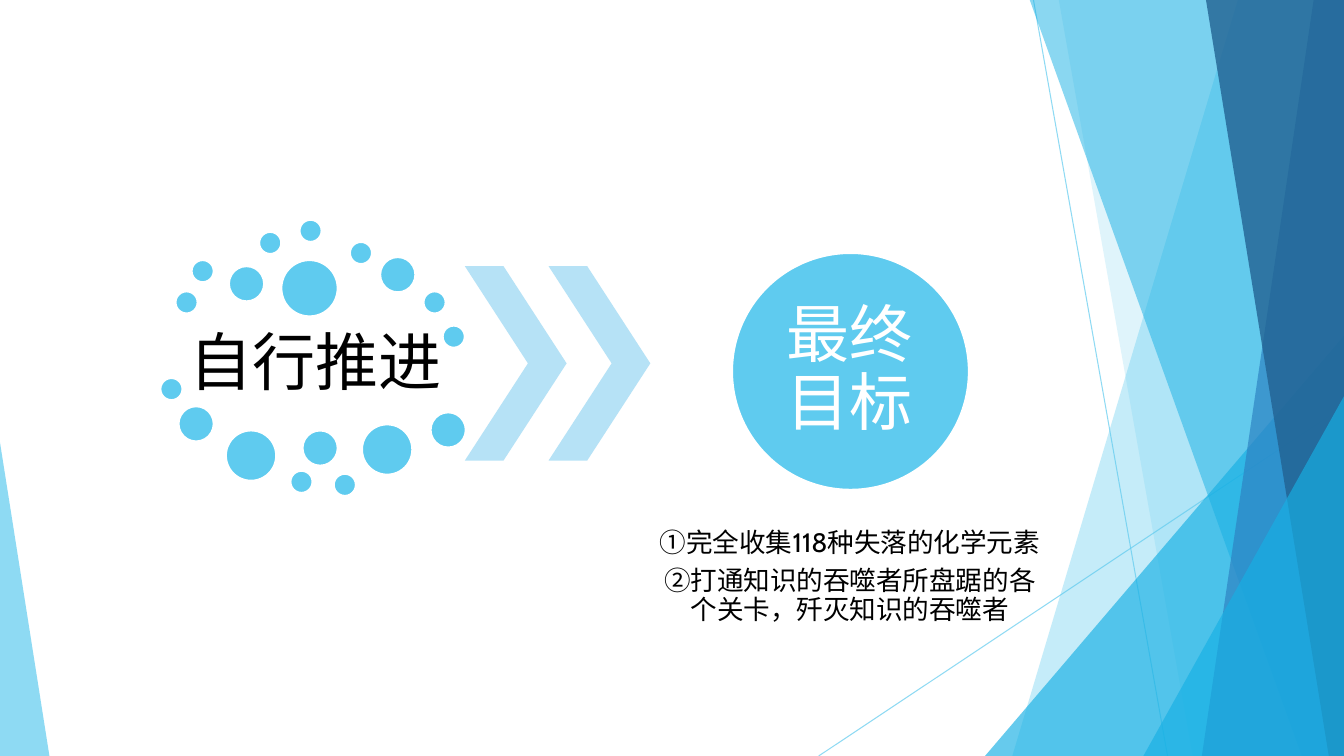
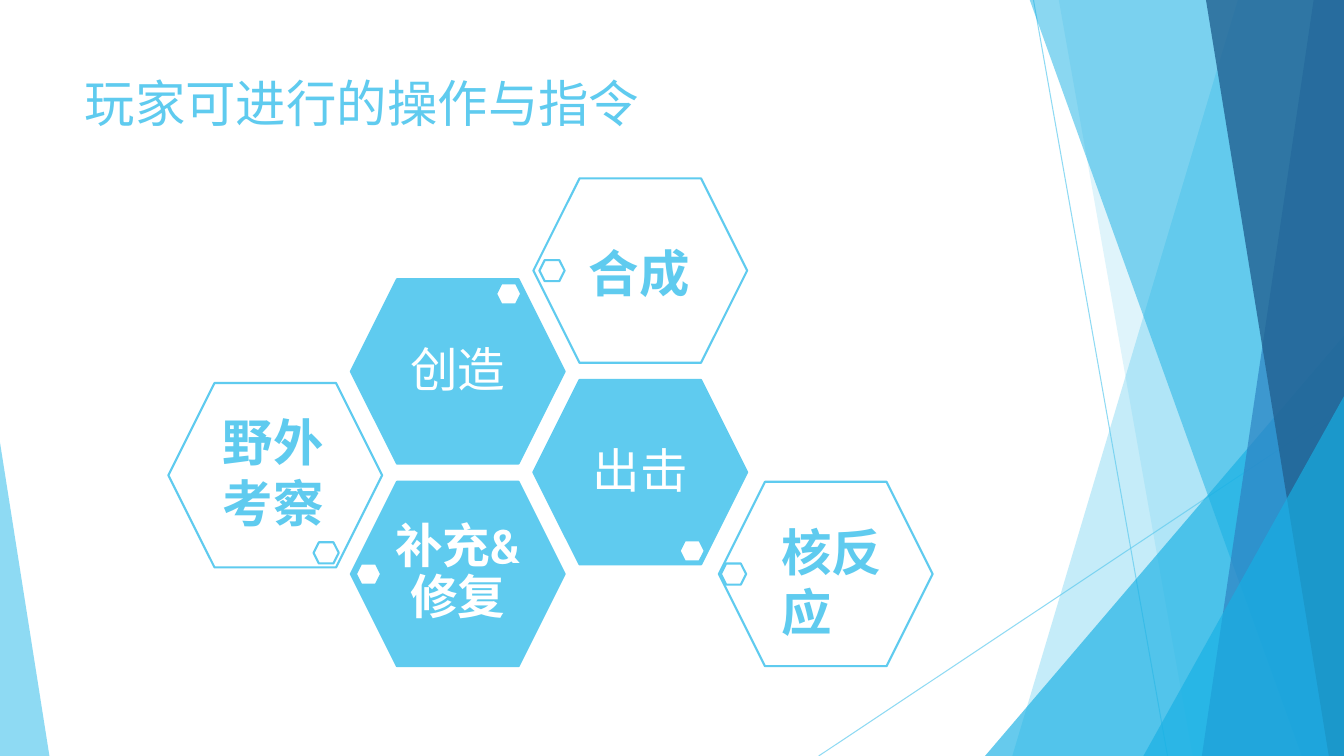
from pptx import Presentation
from pptx.dml.color import RGBColor
from pptx.enum.shapes import MSO_CONNECTOR, MSO_SHAPE
from pptx.enum.text import MSO_ANCHOR, MSO_AUTO_SIZE, PP_ALIGN
from pptx.oxml.ns import qn
from pptx.util import Inches, Pt
from lxml.etree import SubElement

SKY, CYAN, BLUE, NAVY = "5FCBEF", "17B0E4", "2E83C3", "226292"
PALE, WHITE, BLACK = "B6E2F6", "FFFFFF", "000000"
FONT = "Cabin"
WIDE, HIGH = 13.33, 7.5


def paint(shape, fill=None, line=None, width=1.5, alpha=100):
    """Set fill and outline from hex strings; alpha is a percentage."""
    if fill:
        shape.shadow.inherit = False
        shape.fill.solid()
        shape.fill.fore_color.rgb = RGBColor.from_string(fill)
    if line:
        shape.line.color.rgb = RGBColor.from_string(line)
        shape.line.width = Pt(width)
    else:
        shape.line.fill.background()
    if alpha < 100:
        color = shape.element.xpath(".//p:spPr//a:srgbClr")[0]
        SubElement(color, qn("a:alpha")).set("val", str(alpha * 1000))


def write(shape, text, size, color, bold=False, inset=None, tight=True):
    """Fill a text shape; tight text is centred with narrow line spacing."""
    frame = shape.text_frame
    frame.word_wrap = True
    frame.auto_size = MSO_AUTO_SIZE.NONE
    frame.vertical_anchor = MSO_ANCHOR.MIDDLE if tight else MSO_ANCHOR.TOP
    if inset is not None:
        frame.margin_left = frame.margin_right = Inches(inset)
        frame.margin_top = frame.margin_bottom = Inches(inset)
    frame.text = text
    for para in frame.paragraphs:
        para.alignment = PP_ALIGN.CENTER if tight else PP_ALIGN.LEFT
        if tight:
            para.line_spacing = 0.9
            para.space_after = Pt(size * 0.35)
        for run in para.runs:
            run.font.name = FONT
            run.font.size = Pt(size)
            run.font.bold = bold
            run.font.color.rgb = RGBColor.from_string(color)


deck = Presentation()
deck.slide_width, deck.slide_height = Inches(WIDE), Inches(HIGH)

# Shared backdrop, drawn once and moved to the slide master
goal = deck.slides.add_slide(deck.slide_layouts[6])
shapes = goal.shapes

for x1, y1, x2, y2 in [(10.25, 0, 11.58, HIGH), (WIDE, 4.03, 8.12, HIGH)]:
    rule = shapes.add_connector(MSO_CONNECTOR.STRAIGHT, Inches(x1), Inches(y1),
                                Inches(x2), Inches(y2))
    paint(rule, line=SKY, width=0.75, alpha=70)
    SubElement(rule.element.spPr, qn("a:effectLst"))

# Bands give top and foot of the left edge; peaks give left, top, width, tip
backdrop = [
    ("band", (12.28, 10.04), SKY, 36),
    ("band", (10.5, 11.83), SKY, 20),
    ("peak", (9.77, 3.33, 3.56, 1), CYAN, 66),
    ("band", (10.21, 12.91), CYAN, 50),
    ("band", (13.03, 11.92), BLUE, 70),
    ("band", (11.96, 13.18), NAVY, 80),
    ("peak", (11.34, 3.93, 1.99, 1), CYAN, 66),
    ("peak", (0, 4.39, 0.49, 0), SKY, 70),
]
for kind, place, color, alpha in backdrop:
    if kind == "band":
        top, foot = place
        pen = shapes.build_freeform(Inches(top), Inches(-0.01))
        pen.add_line_segments([(Inches(x), Inches(y)) for x, y in
                               [(WIDE, -0.01), (WIDE, HIGH), (foot, HIGH)]])
        part = pen.convert_to_shape()
    else:
        left, top, width, tip = place
        part = shapes.add_shape(MSO_SHAPE.ISOSCELES_TRIANGLE, Inches(left), Inches(top),
                                Inches(width), Inches(HIGH - top))
        part.adjustments[0] = tip
    paint(part, color, alpha=alpha)

for num, part in enumerate(list(shapes), 101):
    part.element.xpath(".//p:cNvPr")[0].set("id", str(num))
    deck.slide_master.shapes.element.append(part.element)

# Slide 1: from self-driven progress to the final goal
box = shapes.add_textbox(Inches(1.75), Inches(3.17), Inches(2.76), Inches(0.91))
write(box, "自行推进", 45, BLACK, inset=0.06)

dots = {
    0.22: [(1.74, 2.89), (1.9, 2.58), (2.57, 2.3), (2.97, 2.18), (3.47, 2.4), (4.2, 2.89),
           (4.39, 3.23), (1.59, 3.75), (2.88, 4.67), (3.31, 4.7)],
    0.35: [(2.27, 2.64), (3.77, 2.55), (1.77, 4.03), (3, 4.27), (4.27, 4.09)],
    0.5: [(2.24, 4.27), (3.59, 4.21)],
    0.56: [(2.79, 2.58)],
    2.35: [(7.26, 2.51)],
}
for size, spots in dots.items():
    for x, y in spots:
        dot = shapes.add_shape(MSO_SHAPE.OVAL, Inches(x), Inches(y), Inches(size), Inches(size))
        paint(dot, SKY, WHITE)

for x in (4.61, 5.44):
    arrow = shapes.add_shape(MSO_SHAPE.CHEVRON, Inches(x), Inches(2.64),
                             Inches(1.01), Inches(1.93))
    arrow.adjustments[0] = 0.62
    paint(arrow, PALE)

box = shapes.add_textbox(Inches(7.6), Inches(2.85), Inches(1.66), Inches(1.66))
write(box, "最终目标", 45, WHITE, inset=0)
box = shapes.add_textbox(Inches(6.45), Inches(5.08), Inches(3.96), Inches(1.3))
write(box, "①完全收集118种失落的化学元素\n②打通知识的吞噬者所盘踞的各个关卡，歼灭知识的吞噬者",
      19, BLACK, inset=0.03)

# Slide 2: honeycomb of player actions
moves = deck.slides.add_slide(deck.slide_layouts[5])
shapes = moves.shapes
title = shapes.title
title.left, title.top = Inches(0.74), Inches(0.67)
title.width, title.height = Inches(9.4), Inches(1.44)
write(title, "玩家可进行的操作与指令", 36, SKY, tight=False)

# Cell corner, fill, and corner of the small hexagon beside it
cells = [
    (3.48, 4.78, SKY, 3.53, 5.59),
    (1.67, 3.8, WHITE, 3.11, 5.38),
    (5.29, 3.77, SKY, 6.74, 5.36),
    (7.13, 4.78, WHITE, 7.15, 5.59),
    (3.48, 2.77, SKY, 4.92, 2.81),
    (5.29, 1.77, WHITE, 5.35, 2.58),
]
for x, y, fill, mx, my in cells:
    for left, top, width, height, color in [(x, y, 2.12, 1.83, fill),
                                            (mx, my, 0.25, 0.21, WHITE)]:
        cell = shapes.add_shape(MSO_SHAPE.HEXAGON, Inches(left), Inches(top),
                                Inches(width), Inches(height))
        paint(cell, color, SKY)

for text, x, y, bold in [("补充&修复", 3.81, 5.06, True), ("出击", 5.62, 4.06, False),
                         ("创造", 3.81, 3.06, False)]:
    box = shapes.add_textbox(Inches(x), Inches(y), Inches(1.46), Inches(1.26))
    write(box, text, 34, WHITE, bold, inset=0)

for text, x, y, height in [("合成", 5.74, 2.35, 0.71), ("野外考察", 2.11, 4.03, 1.31),
                           ("核反应", 7.65, 5.12, 1.31)]:
    box = shapes.add_textbox(Inches(x), Inches(y), Inches(1.29), Inches(height))
    write(box, text, 36, SKY, True, tight=False)

deck.save("out.pptx")
